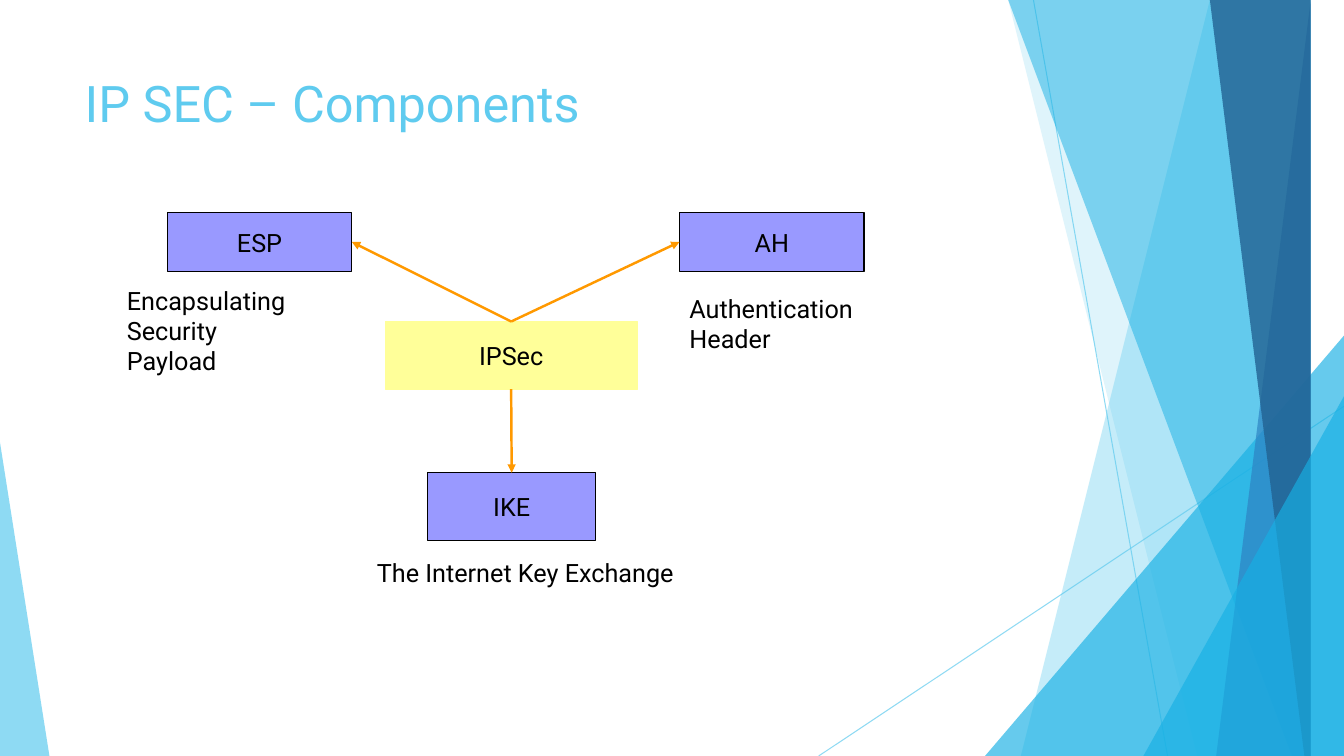
from dataclasses import dataclass

from lxml import etree
from pptx import Presentation
from pptx.dml.color import RGBColor
from pptx.enum.shapes import MSO_CONNECTOR, MSO_SHAPE
from pptx.enum.text import MSO_ANCHOR, PP_ALIGN
from pptx.oxml.ns import qn
from pptx.util import Inches, Pt

RECTANGLE = MSO_SHAPE.RECTANGLE
TRIANGLE = MSO_SHAPE.ISOSCELES_TRIANGLE
STRAIGHT = MSO_CONNECTOR.STRAIGHT
TOP, MIDDLE = MSO_ANCHOR.TOP, MSO_ANCHOR.MIDDLE
LEFT, CENTER = PP_ALIGN.LEFT, PP_ALIGN.CENTER
TOP_SIDE, LEFT_SIDE, BOTTOM_SIDE, RIGHT_SIDE = range(4)

SLIDE_W, SLIDE_H = 13.33, 7.5


@dataclass(frozen=True)
class Theme:
    font: str = "Roboto"
    title_size: float = 36
    text_size: float = 18
    text: str = "000000"
    sky: str = "5FCBEF"
    cyan: str = "17B0E4"
    blue: str = "2E83C3"
    navy: str = "226292"
    component: str = "9999FF"
    hub: str = "FFFF99"
    arrow: str = "FF9900"
    thin_line: float = 0.75
    arrow_line: float = 1.75


class SlideBuilder:
    def __init__(self, slide, theme):
        self.slide = slide
        self.shapes = slide.shapes
        self.theme = theme

    def _set_alpha(self, fill_parent, percent):
        color = fill_parent.find(qn("a:solidFill"))[0]
        etree.SubElement(color, qn("a:alpha"), val=str(percent * 1000))

    def _write(self, frame, text, size, color, align, anchor):
        frame.text = text
        frame.word_wrap = True
        frame.vertical_anchor = anchor
        for paragraph in frame.paragraphs:
            paragraph.alignment = align
            for run in paragraph.runs:
                run.font.name = self.theme.font
                run.font.size = Pt(size)
                run.font.color.rgb = RGBColor.from_string(color)

    def _tint(self, shape, color, opacity):
        shape.shadow.inherit = False
        shape.fill.solid()
        shape.fill.fore_color.rgb = RGBColor.from_string(color)
        shape.line.fill.background()
        self._set_alpha(shape._element.spPr, opacity)

    def title(self, text, left, top, width, height):
        title = self.shapes.title
        title.left, title.top = Inches(left), Inches(top)
        title.width, title.height = Inches(width), Inches(height)
        self._write(title.text_frame, text, self.theme.title_size,
                    self.theme.sky, LEFT, TOP)

    def facet(self, top_x, bottom_x, color, opacity):
        """Full-height panel from a slanted left edge to the slide's right edge."""
        outline = self.shapes.build_freeform(top_x, 0, scale=Inches(1))
        outline.add_line_segments(
            [(SLIDE_W, 0), (SLIDE_W, SLIDE_H), (bottom_x, SLIDE_H)], close=True)
        self._tint(outline.convert_to_shape(), color, opacity)

    def corner(self, left, width, height, apex, color, opacity):
        """Triangle standing on the bottom edge; apex is 0 (left) to 1 (right)."""
        corner = self.shapes.add_shape(
            TRIANGLE, Inches(left), Inches(SLIDE_H - height),
            Inches(width), Inches(height))
        corner.adjustments[0] = apex
        self._tint(corner, color, opacity)

    def line(self, start, end, color, width):
        line = self.shapes.add_connector(
            STRAIGHT, *(Inches(value) for value in (*start, *end)))
        line.line.color.rgb = RGBColor.from_string(color)
        line.line.width = Pt(width)
        etree.SubElement(line._element.spPr, qn("a:effectLst"))
        return line

    def hairline(self, start, end, opacity):
        line = self.line(start, end, self.theme.sky, self.theme.thin_line)
        self._set_alpha(line.line._get_or_add_ln(), opacity)

    def box(self, text, left, top, width, height, fill, border):
        box = self.shapes.add_shape(
            RECTANGLE, Inches(left), Inches(top), Inches(width), Inches(height))
        box.shadow.inherit = False
        box.fill.solid()
        box.fill.fore_color.rgb = RGBColor.from_string(fill)
        box.line.color.rgb = RGBColor.from_string(border)
        box.line.width = Pt(self.theme.thin_line)
        self._write(box.text_frame, text, self.theme.text_size,
                    self.theme.text, CENTER, MIDDLE)
        return box

    def arrow(self, source, source_side, target, target_side):
        arrow = self.line((0, 0), (1, 1), self.theme.arrow, self.theme.arrow_line)
        arrow.begin_connect(source, source_side)
        arrow.end_connect(target, target_side)
        etree.SubElement(arrow.line._get_or_add_ln(), qn("a:tailEnd"),
                         type="triangle")

    def caption(self, text, left, top, width, height):
        caption = self.shapes.add_textbox(
            Inches(left), Inches(top), Inches(width), Inches(height))
        self._write(caption.text_frame, text, self.theme.text_size,
                    self.theme.text, LEFT, TOP)


def main():
    theme = Theme()
    deck = Presentation()
    deck.slide_width, deck.slide_height = Inches(SLIDE_W), Inches(SLIDE_H)
    title_only = deck.slide_layouts[5]
    builder = SlideBuilder(deck.slides.add_slide(title_only), theme)

    # Faceted backdrop, back to front
    builder.hairline((10.25, 0), (11.58, SLIDE_H), 70)
    builder.hairline((SLIDE_W, 4.03), (8.12, SLIDE_H), 70)
    builder.facet(12.28, 10.04, theme.sky, 36)
    builder.facet(10.5, 11.83, theme.sky, 20)
    builder.corner(9.77, 3.56, 4.17, 1, theme.cyan, 66)
    builder.facet(10.21, 12.91, theme.cyan, 50)
    builder.facet(13.03, 11.92, theme.blue, 70)
    builder.facet(11.96, 13.18, theme.navy, 80)
    builder.corner(11.34, 1.99, 3.57, 1, theme.cyan, 66)
    builder.corner(0, 0.49, 3.11, 0, theme.sky, 70)

    # Title
    builder.title("IP SEC – Components", 0.74, 0.67, 9.4, 1.44)

    # IPSec and its components
    esp = builder.box("ESP", 1.66, 2.11, 1.83, 0.58, theme.component, theme.text)
    ah = builder.box("AH", 6.74, 2.11, 1.83, 0.58, theme.component, theme.text)
    ike = builder.box("IKE", 4.24, 4.69, 1.67, 0.67, theme.component, theme.text)
    ipsec = builder.box("IPSec", 3.82, 3.19, 2.5, 0.67, theme.hub, theme.hub)

    # Arrows from IPSec
    builder.arrow(ipsec, TOP_SIDE, esp, RIGHT_SIDE)
    builder.arrow(ipsec, TOP_SIDE, ah, LEFT_SIDE)
    builder.arrow(ipsec, BOTTOM_SIDE, ike, TOP_SIDE)

    # Full names
    builder.caption("Encapsulating\vSecurity\nPayload", 1.16, 2.78, 2.68, 1)
    builder.caption("Authentication\vHeader", 6.74, 2.86, 2.66, 0.7)
    builder.caption("The Internet Key Exchange", 3.64, 5.48, 3.21, 0.4)

    deck.save("out.pptx")


if __name__ == "__main__":
    main()
